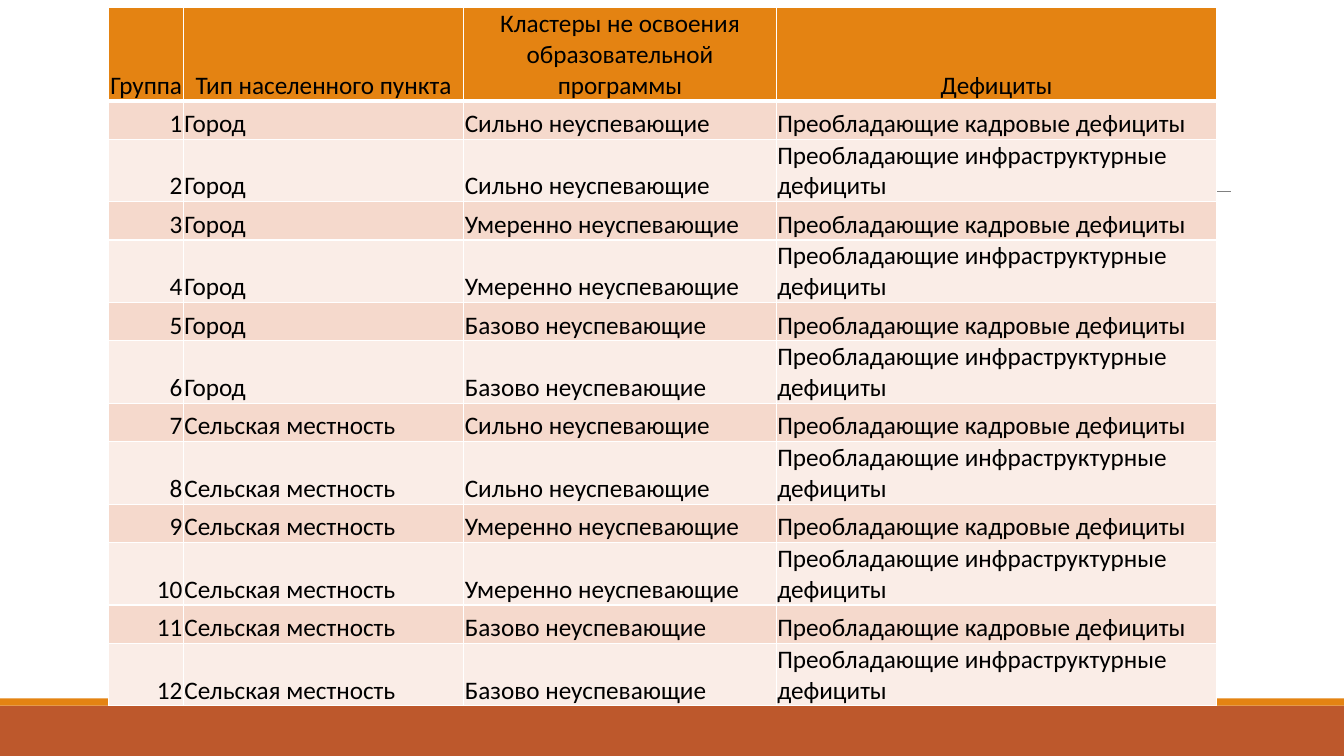
"""Build a slide with a table of school groups and their deficits."""
from dataclasses import dataclass
from itertools import product

from lxml import etree
from pptx import Presentation
from pptx.dml.color import RGBColor
from pptx.enum.shapes import MSO_CONNECTOR, MSO_SHAPE
from pptx.enum.text import MSO_ANCHOR, PP_ALIGN
from pptx.oxml.ns import qn
from pptx.util import Inches, Pt

RECT = MSO_SHAPE.RECTANGLE
STRAIGHT = MSO_CONNECTOR.STRAIGHT
BOTTOM = MSO_ANCHOR.BOTTOM
LEFT, CENTER, RIGHT = PP_ALIGN.LEFT, PP_ALIGN.CENTER, PP_ALIGN.RIGHT

WIDTH, HEIGHT = 13.33, 7.5
COLORS = {
    "rust": "BD582C", "orange": "E48312", "gray": "808080",
    "white": "FFFFFF", "black": "000000", "odd": "F5D9CC", "even": "FAEDE7",
}
COLS = [0.74, 2.78, 3.1, 4.37]
ROWS = [0.93] + [0.38, 0.6] * 6
HEAD = ["Группа", "Тип населенного пункта",
        "Кластеры не освоения образовательной программы", "Дефициты"]
PLACES = ["Город", "Сельская местность"]
LEVELS = ["Сильно неуспевающие", "Умеренно неуспевающие", "Базово неуспевающие"]
LACKS = ["Преобладающие кадровые дефициты",
         "Преобладающие инфраструктурные дефициты"]
CELL = {
    "margin_left": Inches(0.01), "margin_right": Inches(0.01),
    "margin_top": Inches(0.01), "margin_bottom": Inches(0),
    "vertical_anchor": BOTTOM,
}
FONT = {"name": "Calibri", "size": Pt(18), "bold": False}


@dataclass
class Band:
    """A strip across the foot of the slide."""
    top: float
    height: float
    color: str


@dataclass
class Look:
    """The fill, alignment and edge widths of a table cell."""
    fill: str
    align: PP_ALIGN
    top: float = 1
    base: float = 1


BANDS = [Band(7, 0.5, "rust"), Band(6.93, 0.07, "orange")]


def tint(name: str) -> RGBColor:
    """Return a named colour."""
    return RGBColor.from_string(COLORS[name])


def style(target, values: dict) -> None:
    """Set every given attribute."""
    for key, value in values.items():
        setattr(target, key, value)


def draw_band(slide, band: Band) -> None:
    """Draw one strip."""
    shape = slide.shapes.add_shape(
        RECT, 0, Inches(band.top), Inches(WIDTH), Inches(band.height))
    shape.shadow.inherit = False
    shape.fill.solid()
    shape.fill.fore_color.rgb = tint(band.color)
    shape.line.fill.background()


def draw_rule(slide) -> None:
    """Draw the thin line behind the table."""
    rule = slide.shapes.add_connector(
        STRAIGHT, Inches(1.31), Inches(1.9), Inches(12.21), Inches(1.9))
    rule.line.color.rgb = tint("gray")
    rule.line.width = Pt(0.5)
    etree.SubElement(rule._element.spPr, qn("a:effectLst"))


def edge(cell, look: Look) -> None:
    """Give a cell its white borders."""
    props = cell._tc.get_or_add_tcPr()
    sides = {"L": 1, "R": 1, "T": look.top, "B": look.base}
    for side, width in sides.items():
        line = etree.SubElement(props, qn(f"a:ln{side}"), w=str(Pt(width)))
        fill = etree.SubElement(line, qn("a:solidFill"))
        etree.SubElement(fill, qn("a:srgbClr"), val=COLORS["white"])


def fill_cell(cell, text: str, look: Look) -> None:
    """Write and format one cell."""
    cell.text = text
    style(cell, CELL)
    edge(cell, look)
    cell.fill.solid()
    cell.fill.fore_color.rgb = tint(look.fill)
    para = cell.text_frame.paragraphs[0]
    para.alignment = look.align
    font = para.runs[0].font
    style(font, FONT)
    font.color.rgb = tint("black")


def pick_look(row: int, col: int) -> Look:
    """Choose the look of a cell by its place."""
    if row == 0:
        return Look("orange", CENTER, base=3)
    return Look("odd" if row % 2 else "even", LEFT if col else RIGHT,
                top=3 if row == 1 else 1)


def draw_table(slide) -> None:
    """Draw the table of groups."""
    groups = product(PLACES, LEVELS, LACKS)
    data = [HEAD] + [[str(num), *group] for num, group in enumerate(groups, 1)]
    table = slide.shapes.add_table(
        len(ROWS), len(COLS), Inches(1.08), Inches(0.07),
        Inches(sum(COLS)), Inches(sum(ROWS))).table
    for col, width in zip(table.columns, COLS):
        col.width = Inches(width)
    for row, height in zip(table.rows, ROWS):
        row.height = Inches(height)
    for row, texts in enumerate(data):
        for col, text in enumerate(texts):
            fill_cell(table.cell(row, col), text, pick_look(row, col))


def main() -> None:
    """Build and save the slide."""
    deck = Presentation()
    deck.slide_width, deck.slide_height = Inches(WIDTH), Inches(HEIGHT)
    slide = deck.slides.add_slide(deck.slide_layouts[6])
    for band in BANDS:
        draw_band(slide, band)
    draw_rule(slide)
    draw_table(slide)
    deck.save("out.pptx")


if __name__ == "__main__":
    main()
